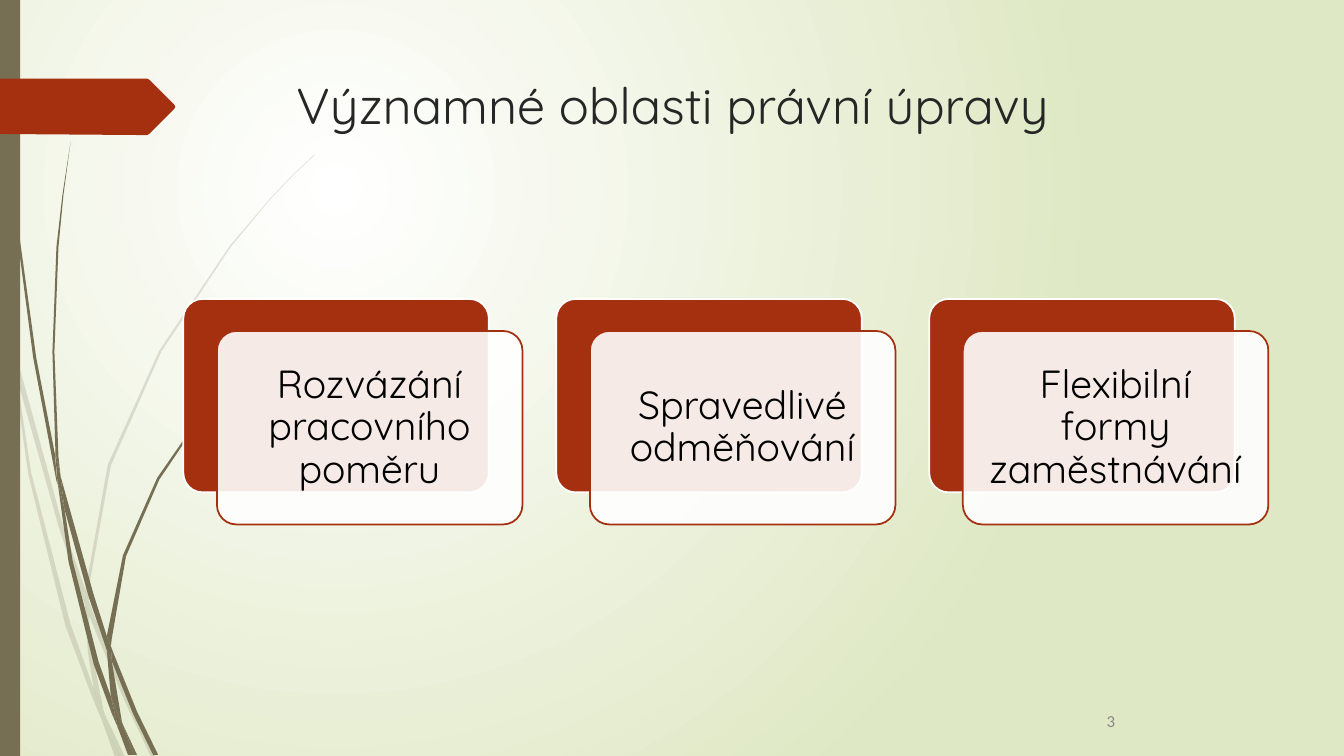
from dataclasses import dataclass

from lxml import etree
from pptx import Presentation
from pptx.dml.color import RGBColor
from pptx.enum.shapes import MSO_SHAPE
from pptx.enum.text import MSO_ANCHOR, MSO_AUTO_SIZE, PP_ALIGN
from pptx.oxml.ns import qn
from pptx.util import Pt

RECT = MSO_SHAPE.RECTANGLE
ROUND = MSO_SHAPE.ROUNDED_RECTANGLE
LEFT, CENTER, RIGHT = PP_ALIGN.LEFT, PP_ALIGN.CENTER, PP_ALIGN.RIGHT
TOP, MIDDLE = MSO_ANCHOR.TOP, MSO_ANCHOR.MIDDLE


@dataclass(frozen=True)
class Theme:
    white: str = "FFFFFF"
    green: str = "DFE8C4"
    brown: str = "766F54"
    red: str = "A53010"
    dark: str = "262626"
    black: str = "000000"
    grey: str = "898989"
    font: str = "Quicksand"
    plain: str = "Calibri"
    title: int = 36
    card: int = 28
    note: int = 12


THEME = Theme()
UNIT = Pt(0.72)  # outlines below count in this unit

PALE = [
    [(11, 350), (9, 322), (0, 282), (0, 299), (10, 344)],
    [(58, 522), (84, 599), (85, 586), (62, 520), (14, 345), (17, 376)],
    [(92, 607), (88, 596), (88, 610), (123, 694), (150, 751), (155, 751),
     (127, 692)],
    [(119, 751), (124, 751), (105, 711)],
    [(93, 683), (70, 619), (31, 469), (17, 376), (11, 350), (28, 470),
     (65, 621), (92, 693), (101, 714), (99, 707)],
    [(84, 599), (87, 646), (93, 683), (96, 692), (105, 711), (103, 706),
     (91, 646), (88, 610), (88, 608)],
    [(88, 584), (110, 462), (160, 349), (229, 245), (268, 198), (290, 175),
     (312, 154), (312, 153), (289, 175), (268, 197), (228, 244), (158, 348),
     (107, 461), (85, 584), (85, 586), (88, 596)],
    [(101, 714), (114, 751), (119, 751)],
    [(88, 608), (88, 610), (88, 596), (85, 586), (84, 599)],
    [(96, 692), (93, 683), (99, 707), (101, 714), (119, 751), (105, 711)],
]
DEEP = [
    [(7, 110), (17, 233), (33, 355), (56, 477), (57, 481), (55, 457),
     (55, 453), (36, 355), (19, 232), (8, 109), (5, 48), (4, 0), (3, 0),
     (4, 48)],
    [(88, 592), (106, 645), (106, 633), (106, 631), (93, 590), (60, 472),
     (64, 505)],
    [(113, 649), (110, 641), (111, 656), (132, 708), (152, 749), (157, 749),
     (136, 706)],
    [(110, 691), (98, 657), (72, 556), (64, 505), (57, 477), (68, 557),
     (93, 659), (111, 708), (117, 722), (116, 717)],
    [(60, 472), (58, 453), (54, 349), (58, 245), (63, 193), (70, 141),
     (62, 193), (56, 245), (52, 349), (55, 449)],
    [(133, 749), (136, 749), (122, 719)],
    [(57, 477), (64, 505), (60, 472), (55, 449), (55, 453)],
    [(111, 633), (125, 552), (158, 476), (205, 406), (231, 374), (245, 359),
     (261, 344), (260, 344), (245, 358), (231, 373), (204, 405), (156, 474),
     (122, 551), (106, 631), (110, 641)],
    [(117, 722), (127, 749), (131, 749)],
    [(106, 645), (110, 691), (116, 706), (122, 719), (121, 716), (111, 656),
     (109, 651)],
    [(106, 645), (109, 651), (111, 656), (110, 641), (106, 631), (106, 633)],
    [(116, 706), (110, 691), (116, 717), (117, 722), (130, 749), (133, 749),
     (122, 719)],
]
FLAG = [(173, 108), (148, 133), (146, 134), (136, 134), (0, 133), (0, 78),
        (136, 78), (146, 78), (148, 79), (173, 104), (174, 106)]
AREAS = ["Rozvázání pracovního poměru", "Spravedlivé odměňování",
         "Flexibilní formy zaměstnávání"]


def rgb(code):
    return RGBColor.from_string(code)


def paint(shape, fill, line=None, alpha=100):
    shape.shadow.inherit = False
    shape.fill.solid()
    shape.fill.fore_color.rgb = rgb(fill)
    if alpha < 100:
        color = shape.fill._xPr.find(qn("a:solidFill"))[0]
        etree.SubElement(color, qn("a:alpha")).set("val", str(alpha * 1000))
    if line:
        shape.line.color.rgb = rgb(line)
        shape.line.width = Pt(1.25)
    else:
        shape.line.fill.background()


def add_box(slide, kind, box, fill, line=None, alpha=100, bend=None):
    shape = slide.shapes.add_shape(kind, *map(Pt, box))
    if bend is not None:
        shape.adjustments[0] = bend
    paint(shape, fill, line, alpha)


def add_form(slide, dots, fill, alpha=100):
    pen = slide.shapes.build_freeform(*dots[0], scale=UNIT)
    pen.add_line_segments(dots[1:], close=True)
    paint(pen.convert_to_shape(), fill, alpha=alpha)


def write(shape, text, size, color, align, anchor, font=THEME.font):
    frame = shape.text_frame
    frame.text = text
    frame.word_wrap = True
    frame.auto_size = MSO_AUTO_SIZE.NONE
    frame.vertical_anchor = anchor
    para = frame.paragraphs[0]
    para.alignment = align
    para.font.name = font
    para.font.size = Pt(size)
    para.font.color.rgb = rgb(color)
    return frame


def place(shape, box):
    shape.left, shape.top, shape.width, shape.height = map(Pt, box)


def set_ground(slide):
    """Give the slide a round gradient, white in its upper left."""
    fill = slide.background.fill
    fill.gradient()
    tones = (THEME.white, THEME.green)
    for spot, (stop, tone) in enumerate(zip(fill.gradient_stops, tones)):
        stop.color.rgb = rgb(tone)
        stop.position = spot
    line = next(slide.element.iter(qn("a:lin")))
    ring = etree.Element(qn("a:path"), path="circle")
    etree.SubElement(ring, qn("a:fillToRect"),
                     l="50000", t="50000", r="100000", b="100000")
    line.getparent().replace(line, ring)


def add_card(slide, left, text):
    wide, high = 218.2, 138.2
    add_box(slide, ROUND, (left, 213.5, wide, high), THEME.red, THEME.white,
            bend=0.1)
    add_box(slide, ROUND, (left + 24, 236.4, wide, high), THEME.white,
            THEME.red, alpha=90, bend=0.1)
    label = slide.shapes.add_textbox(
        *map(Pt, (left + 28.1, 240.6, 209.5, 130.2)))
    frame = write(label, text, THEME.card, THEME.black, CENTER, MIDDLE)
    frame.margin_left = frame.margin_right = Pt(8.64)
    frame.margin_top = frame.margin_bottom = Pt(8.64)
    frame.paragraphs[0].line_spacing = 0.9


def main():
    deck = Presentation()
    deck.slide_width, deck.slide_height = Pt(960), Pt(540)
    slide = deck.slides.add_slide(deck.slide_layouts[5])
    set_ground(slide)
    for dots in PALE:
        add_form(slide, dots, THEME.brown, alpha=20)
    for dots in DEEP:
        add_form(slide, dots, THEME.brown)
    add_box(slide, RECT, (0, 0, 14.4, 540), THEME.brown)
    add_form(slide, FLAG, THEME.red)

    title = slide.shapes.title
    place(title, (204.5, 49, 702, 100.8))
    write(title, "Významné oblasti právní úpravy", THEME.title, THEME.dark,
          LEFT, TOP)
    for index, text in enumerate(AREAS):
        add_card(slide, 131 + 266.4 * index, text)
    page = slide.shapes.add_textbox(*map(Pt, (635.8, 500.4, 167.8, 28.8)))
    write(page, "3", THEME.note, THEME.grey, RIGHT, MIDDLE, THEME.plain)
    deck.save("out.pptx")


if __name__ == "__main__":
    main()
